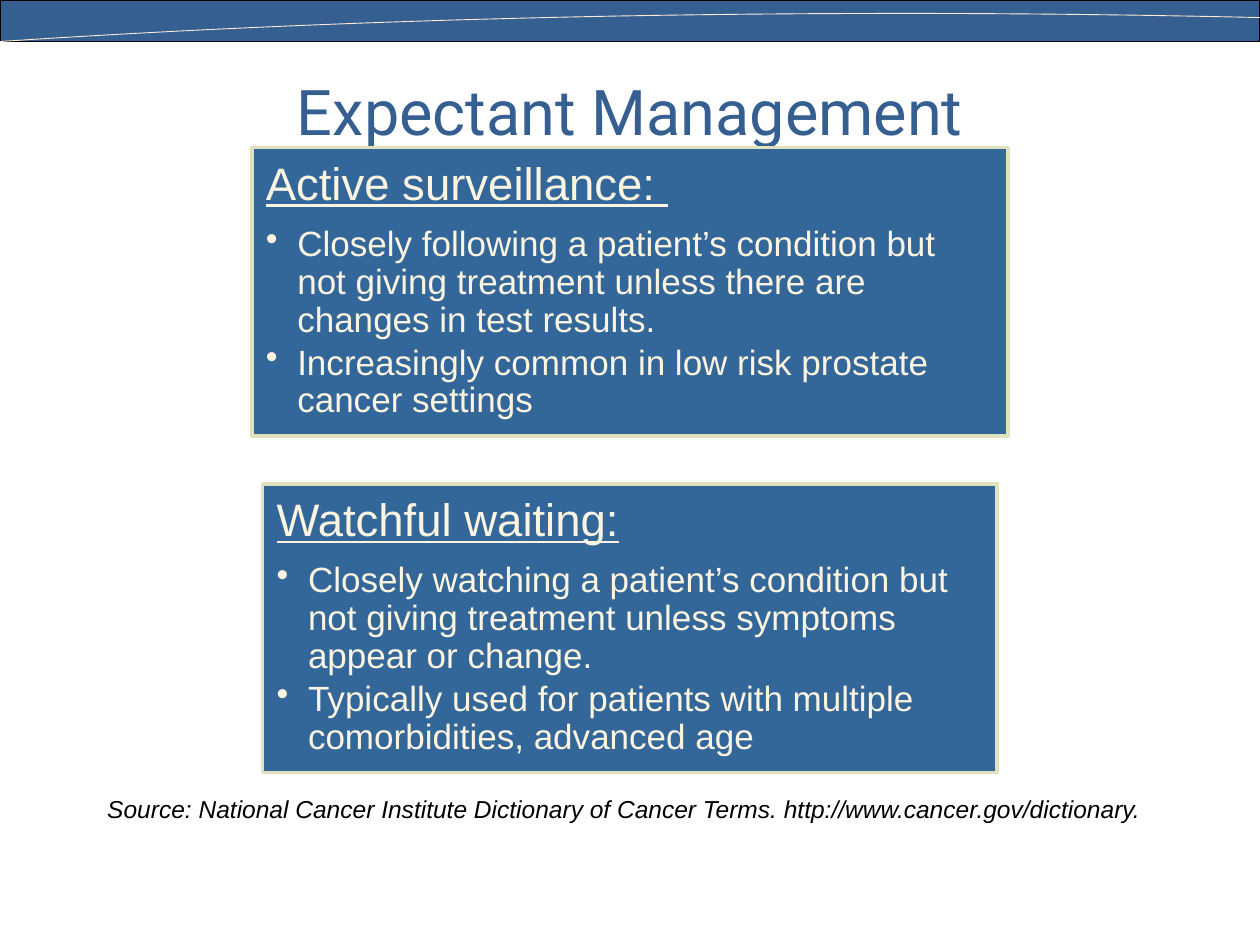
from lxml.etree import SubElement
from pptx import Presentation
from pptx.dml.color import RGBColor
from pptx.enum.shapes import MSO_SHAPE as SHAPE
from pptx.enum.text import MSO_ANCHOR as ANCHOR, PP_ALIGN as ALIGN
from pptx.oxml.ns import qn
from pptx.util import Inches, Pt

BAND_BLUE = RGBColor(0x36, 0x5F, 0x91)
PANEL_BLUE = RGBColor(0x33, 0x66, 0x99)
PANEL_EDGE = RGBColor(0xE0, 0xE1, 0xBD)
CREAM = RGBColor(0xFB, 0xF4, 0xE1)
CURVE_PEACH = RGBColor(0xFF, 0xEA, 0xD5)
BLACK = RGBColor(0, 0, 0)

# Content
TITLE = "Expectant Management"
SOURCE = ("Source: National Cancer Institute Dictionary of Cancer Terms. "
          "http://www.cancer.gov/dictionary.")
PANELS = [
    {"top": 1.17, "width": 6, "heading": "Active surveillance: ", "bullets": [
        "Closely following a patient’s condition but not giving treatment "
        "unless there are changes in test results.",
        "Increasingly common in low risk prostate cancer settings"]},
    {"top": 3.84, "width": 5.83, "heading": "Watchful waiting:", "bullets": [
        "Closely watching a patient’s condition but not giving treatment "
        "unless symptoms appear or change.",
        "Typically used for patients with multiple comorbidities, advanced age"]},
]
SLIDE_W = 10
PANEL_H = 2.29
CURVE = [(10, 0.14), (7.44, 0.08), (3.79, 0.08), (0, 0.33)]
CURVE_STEPS = 40

TITLE_FONT = {"name": "Roboto", "size": Pt(36)}
HEADING_FONT = {"name": "Arial", "size": Pt(26), "underline": True}
BULLET_FONT = {"name": "Arial", "size": Pt(20)}
SOURCE_FONT = {"name": "Arial", "size": Pt(14), "italic": True}


def write(p, text, font, color):
    r = p.add_run()
    r.text = text
    for key, value in font.items():
        setattr(r.font, key, value)
    r.font.color.rgb = color


def add_box(slide, left, top, width, height, fill, edge, weight):
    sp = slide.shapes.add_shape(SHAPE.RECTANGLE, Inches(left), Inches(top),
                                Inches(width), Inches(height))
    sp.shadow.inherit = False
    sp.fill.solid()
    sp.fill.fore_color.rgb = fill
    sp.line.color.rgb = edge
    sp.line.width = Pt(weight)
    return sp


def add_centred_text(slide, left, top, width, height, text, font, color, anchor):
    box = slide.shapes.add_textbox(Inches(left), Inches(top),
                                   Inches(width), Inches(height))
    tf = box.text_frame
    tf.word_wrap = True
    tf.vertical_anchor = anchor
    p = tf.paragraphs[0]
    p.alignment = ALIGN.CENTER
    write(p, text, font, color)


def add_curve(slide):
    def point(t):
        weights = ((1 - t) ** 3, 3 * t * (1 - t) ** 2, 3 * t * t * (1 - t), t ** 3)
        return tuple(Inches(sum(w * c[axis] for w, c in zip(weights, CURVE)))
                     for axis in (0, 1))

    points = [point(i / CURVE_STEPS) for i in range(CURVE_STEPS + 1)]
    builder = slide.shapes.build_freeform(*points[0])
    builder.add_line_segments(points[1:], close=False)
    sp = builder.convert_to_shape()
    sp.shadow.inherit = False
    sp.fill.background()
    sp.line.color.rgb = CURVE_PEACH
    sp.line.width = Pt(0.5)


def add_panel(slide, panel):
    left = (SLIDE_W - panel["width"]) / 2
    sp = add_box(slide, left, panel["top"], panel["width"], PANEL_H,
                 PANEL_BLUE, PANEL_EDGE, 2)
    tf = sp.text_frame
    tf.word_wrap = True
    tf.vertical_anchor = ANCHOR.TOP
    for side in ("left", "top", "right", "bottom"):
        setattr(tf, f"margin_{side}", Inches(0.11))

    heading = tf.paragraphs[0]
    write(heading, panel["heading"], HEADING_FONT, CREAM)
    heading.space_after = Pt(9)
    for text in panel["bullets"]:
        p = tf.add_paragraph()
        pPr = p._p.get_or_add_pPr()
        pPr.set("marL", str(Inches(0.25)))
        pPr.set("indent", str(Inches(-0.25)))
        SubElement(pPr, qn("a:buChar"), char="•")
        write(p, text, BULLET_FONT, CREAM)
        p.space_after = Pt(3)
    for p in tf.paragraphs:
        p.alignment = ALIGN.LEFT
        p.line_spacing = 0.9


def main():
    prs = Presentation()
    prs.slide_width, prs.slide_height = Inches(SLIDE_W), Inches(7.5)
    slide = prs.slides.add_slide(prs.slide_layouts[6])

    # Top band with its curve
    add_box(slide, 0, 0, SLIDE_W, 0.33, BAND_BLUE, BLACK, 0.75)
    add_curve(slide)

    # Title, panels and source line
    add_centred_text(slide, 0.5, 0.25, 9, 1.25, TITLE, TITLE_FONT, BAND_BLUE,
                     ANCHOR.MIDDLE)
    for panel in PANELS:
        add_panel(slide, panel)
    add_centred_text(slide, 0.33, 6.25, 9.25, 0.34, SOURCE, SOURCE_FONT, BLACK,
                     ANCHOR.TOP)

    prs.save("out.pptx")


if __name__ == "__main__":
    main()
